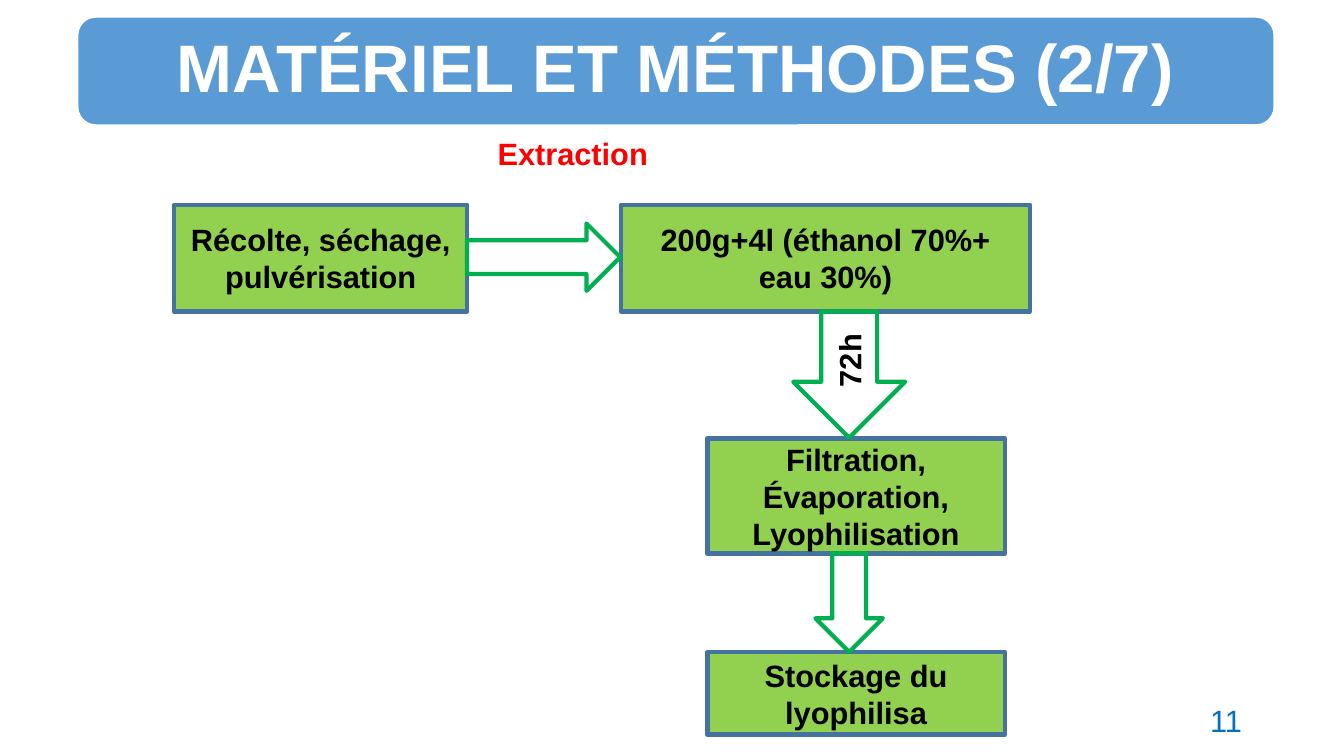
"""Build the extraction flow slide of the methods section."""
from dataclasses import dataclass

from pptx import Presentation
from pptx.dml.color import RGBColor
from pptx.enum.shapes import MSO_SHAPE as Preset
from pptx.enum.text import MSO_ANCHOR as Anchor, MSO_AUTO_SIZE as AutoSize, PP_ALIGN as Align
from pptx.shapes.autoshape import Shape
from pptx.slide import Slide
from pptx.util import Cm, Pt

COLOURS = {
    "step": "92D050", "step_edge": "43739E", "arrow": "00B050", "banner": "5B9BD5",
    "white": "FFFFFF", "black": "000000", "heading": "FF0000", "number": "0070C0",
}


@dataclass(frozen=True)
class Area:
    """A rectangle in centimetres."""
    left: float
    top: float
    width: float
    height: float

    def lengths(self) -> tuple[Cm, Cm, Cm, Cm]:
        """Return left, top, width and height as lengths."""
        return Cm(self.left), Cm(self.top), Cm(self.width), Cm(self.height)


@dataclass(frozen=True)
class Step:
    """One box of the flow."""
    label: str
    area: Area


@dataclass(frozen=True)
class Arrow:
    """A block arrow between two steps."""
    area: Area
    rotation: int = 0
    label: str = ""


STEPS = [
    Step("Récolte, séchage, pulvérisation", Area(4.39, 5.16, 7.39, 2.69)),
    Step("200g+4l (éthanol 70%+ eau 30%)", Area(15.65, 5.16, 10.31, 2.69)),
    Step("Filtration, Évaporation, Lyophilisation", Area(17.83, 11.05, 7.49, 2.9)),
    Step("Stockage du lyophilisa", Area(17.83, 16.43, 7.49, 2.08)),
]
ARROWS = [
    Arrow(Area(12.85, 4.55, 1.7, 3.86), rotation=270),
    Arrow(Area(19.99, 7.85, 2.82, 3.18), label="72h"),
    Arrow(Area(20.55, 13.94, 1.7, 2.49)),
]


def colour(name: str) -> RGBColor:
    """Look up a named colour."""
    return RGBColor.from_string(COLOURS[name])


def write(holder: Shape, text: str, *, size: int = 22, ink: str = "black", bold: bool = True,
          align: Align = Align.CENTER, anchor: Anchor = Anchor.MIDDLE) -> None:
    """Put one formatted paragraph into a shape."""
    frame = holder.text_frame
    frame.word_wrap = True
    frame.auto_size = AutoSize.NONE
    frame.vertical_anchor = anchor
    paragraph = frame.paragraphs[0]
    paragraph.alignment = align
    run = paragraph.add_run()
    run.text = text
    run.font.name = "Arial"
    run.font.size = Pt(size)
    run.font.bold = bold
    run.font.color.rgb = colour(ink)


def draw_block(slide: Slide, preset: Preset, area: Area, edge: str,
               fill: str = "", weight: float = 3) -> Shape:
    """Draw a preset shape, hollow when no fill is named."""
    block = slide.shapes.add_shape(preset, *area.lengths())
    block.shadow.inherit = False
    if fill:
        block.fill.solid()
        block.fill.fore_color.rgb = colour(fill)
    else:
        block.fill.background()
    block.line.color.rgb = colour(edge)
    block.line.width = Pt(weight)
    return block


def draw_step(slide: Slide, step: Step) -> None:
    """Draw a labelled step box."""
    write(draw_block(slide, Preset.RECTANGLE, step.area, "step_edge", "step"), step.label)


def draw_arrow(slide: Slide, arrow: Arrow) -> None:
    """Draw a hollow arrow, its label reading upwards."""
    block = draw_block(slide, Preset.DOWN_ARROW, arrow.area, "arrow")
    block.rotation = arrow.rotation
    if arrow.label:
        block.text_frame._txBody.bodyPr.set("vert", "vert270")
        write(block, arrow.label)


def draw_title(slide: Slide) -> None:
    """Draw the banner and lay the title over it."""
    draw_block(slide, Preset.ROUNDED_RECTANGLE, Area(1.96, 0.43, 30.15, 2.72),
               "white", "banner", weight=1)
    title = slide.shapes.title
    title.left, title.top, title.width, title.height = Area(2.08, 0.56, 29.9, 2.44).lengths()
    slide.shapes._spTree.append(title._element)
    frame = title.text_frame
    frame.margin_left = frame.margin_right = frame.margin_top = frame.margin_bottom = Cm(0.46)
    frame.paragraphs[0].line_spacing = 0.9
    write(title, "MATÉRIEL ET MÉTHODES (2/7)", size=48, ink="white")


def main() -> None:
    """Build and save the slide."""
    deck = Presentation()
    deck.slide_width, deck.slide_height = Cm(33.87), Cm(19.05)
    slide = deck.slides.add_slide(deck.slide_layouts[5])
    for step in STEPS:
        draw_step(slide, step)
    for arrow in ARROWS:
        draw_arrow(slide, arrow)
    heading = slide.shapes.add_textbox(*Area(9.75, 3.28, 9.35, 1.19).lengths())
    write(heading, "Extraction", ink="heading", align=Align.LEFT, anchor=Anchor.TOP)
    heading.text_frame.paragraphs[0]._p.get_or_add_pPr().set("marL", str(Cm(2.54)))
    number = slide.shapes.add_textbox(*Area(23.93, 17.65, 7.62, 1.02).lengths())
    write(number, "11", ink="number", bold=False, align=Align.RIGHT)
    draw_title(slide)
    deck.save("out.pptx")


if __name__ == "__main__":
    main()
